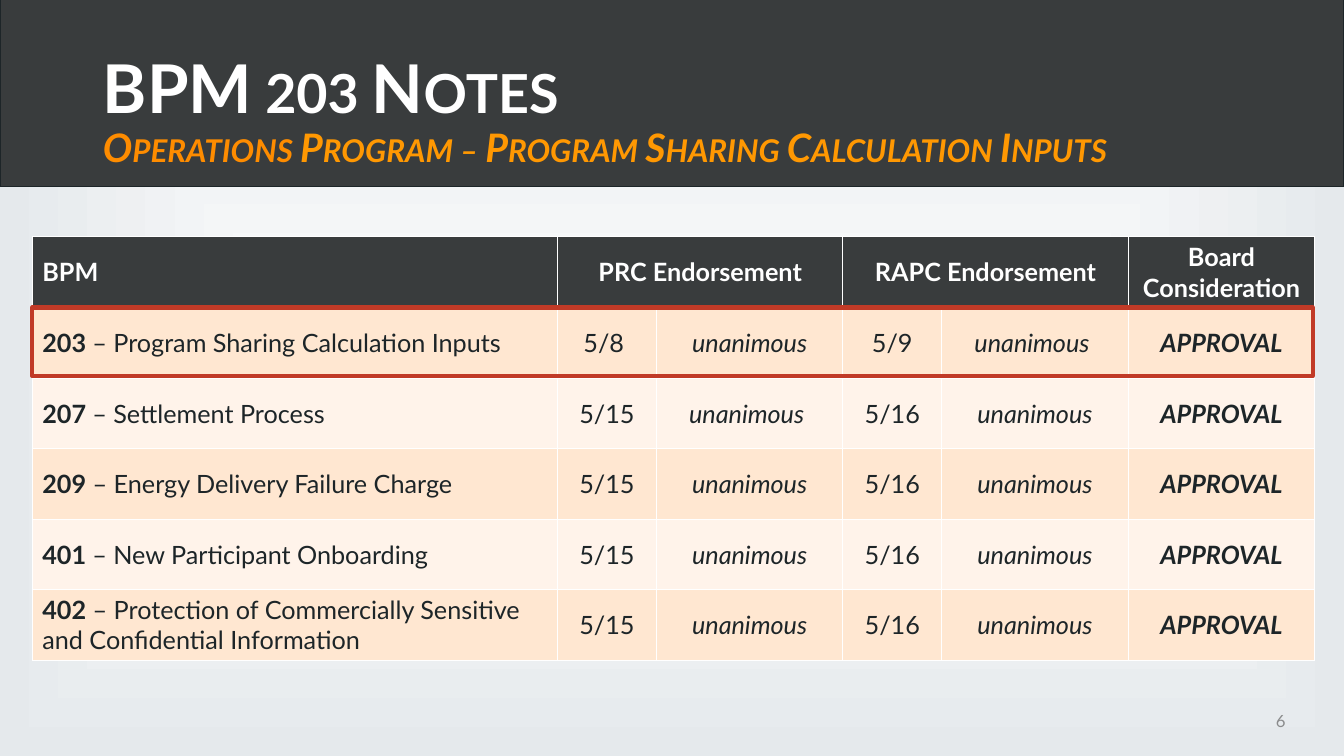
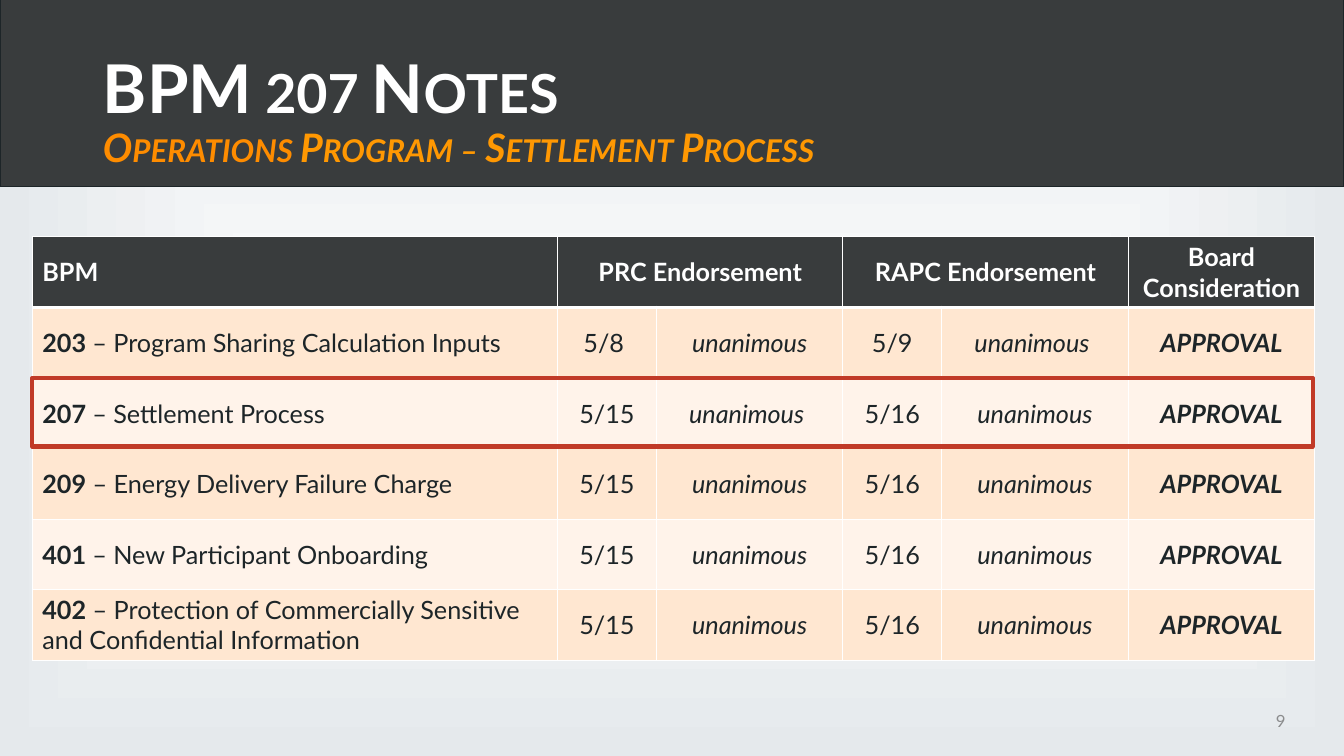
from lxml import etree
from pptx import Presentation
from pptx.dml.color import RGBColor
from pptx.enum.shapes import MSO_SHAPE
from pptx.enum.text import MSO_ANCHOR, MSO_AUTO_SIZE, PP_ALIGN
from pptx.oxml.ns import qn
from pptx.util import Inches, Pt

RECTANGLE = MSO_SHAPE.RECTANGLE
MIDDLE = MSO_ANCHOR.MIDDLE
NO_AUTOFIT = MSO_AUTO_SIZE.NONE
LEFT, CENTER, RIGHT = PP_ALIGN.LEFT, PP_ALIGN.CENTER, PP_ALIGN.RIGHT

FONT = "Lato"
WHITE = RGBColor(0xFF, 0xFF, 0xFF)
MIST = RGBColor(0xE5, 0xE9, 0xEC)
CHARCOAL = RGBColor(0x39, 0x3C, 0x3D)
INK = RGBColor(0x1D, 0x25, 0x28)
GRAY = RGBColor(0x8B, 0x8C, 0x8D)
DEEP_ORANGE = RGBColor(0xFE, 0x8C, 0x00)
ORANGE = RGBColor(0xFF, 0x98, 0x02)
PEACH = RGBColor(0xFF, 0xE7, 0xD1)
CREAM = RGBColor(0xFF, 0xF3, 0xEA)
RED = RGBColor(0xC1, 0x3A, 0x27)

SLIDE_WIDTH, SLIDE_HEIGHT = Inches(13.33), Inches(7.5)
BAND_BOX = (0, Inches(-0.15), SLIDE_WIDTH, Inches(2))
TITLE_BOX = (Inches(0.92), Inches(0.4), Inches(11.5), Inches(1.45))
NUMBER_BOX = (Inches(12.23), Inches(6.95), Inches(0.62), Inches(0.4))
TABLE_BOX = (Inches(0.32), Inches(2.35), Inches(12.7), Inches(4.2))
COLUMN_WIDTHS = (5.21, 0.98, 1.85, 0.98, 1.85, 1.85)
HIGHLIGHT_HEIGHT = Inches(0.68)

HEADINGS = {0: "BPM", 1: "PRC Endorsement", 3: "RAPC Endorsement", 5: "Board Consideration"}
ENDORSEMENTS = [
    ("203 ", "– Program Sharing Calculation Inputs", "5/8 ", "unanimous", "5/9", "unanimous "),
    ("207 ", "– Settlement Process", "5/15", "unanimous ", "5/16", "unanimous"),
    ("209", " – Energy Delivery Failure Charge", "5/15", "unanimous", "5/16", "unanimous"),
    ("401 ", "– New Participant Onboarding", "5/15", "unanimous", "5/16", "unanimous"),
    ("402", " – Protection of Commercially Sensitive and Confidential Information",
     "5/15", "unanimous", "5/16", "unanimous"),
]
DECISION = "APPROVAL"
NOTES = [
    ("BPM 203 Notes", " Program – Program Sharing Calculation Inputs", "6", 1),
    ("BPM 207 Notes", " Program – Settlement Process", "9", 2),
]


def style_run(run, size, color, bold=False, italic=False):
    font = run.font
    font.name, font.size = FONT, Pt(size)
    font.bold, font.italic = bold, italic
    font.color.rgb = color


def add_run(paragraph, text, *style):
    run = paragraph.add_run()
    run.text = text
    style_run(run, *style)
    return run


def place(shape, box):
    shape.left, shape.top, shape.width, shape.height = box


def set_background(master):
    fill = master.background.fill
    fill.gradient()
    for stop, color in zip(fill.gradient_stops, (WHITE, MIST)):
        stop.color.rgb = color
    gradient = master.element.find(".//" + qn("a:gradFill"))
    gradient.remove(gradient.find(qn("a:lin")))
    shade = etree.SubElement(gradient, qn("a:path"), path="shape")
    etree.SubElement(shade, qn("a:fillToRect"), l="50000", t="50000", r="50000", b="50000")


def add_layout_band(layout, slide):
    band = slide.shapes.add_shape(RECTANGLE, *BAND_BOX)
    band.shadow.inherit = False
    band.fill.solid()
    band.fill.fore_color.rgb = CHARCOAL
    band.line.color.rgb = INK
    band.line.width = Pt(1)
    layout.shapes.element.insert(2, band.element)


def fill_title(title, heading, topic):
    place(title, TITLE_BOX)
    frame = title.text_frame
    frame.vertical_anchor = MIDDLE
    frame.auto_size = NO_AUTOFIT
    paragraph = frame.paragraphs[0]
    paragraph.alignment = LEFT
    paragraph.line_spacing = 0.9
    add_run(paragraph, heading, 48, WHITE, True)
    paragraph.add_line_break()
    add_run(paragraph, "Operations", 28, DEEP_ORANGE, True, True)
    add_run(paragraph, topic, 28, ORANGE, True, True)
    for run in paragraph.runs:
        run.font._element.set("cap", "small")


def add_number(slide, box, number):
    frame = slide.shapes.add_textbox(*box).text_frame
    frame.word_wrap = True
    frame.vertical_anchor = MIDDLE
    paragraph = frame.paragraphs[0]
    paragraph.text = number
    paragraph.alignment = RIGHT
    style_run(paragraph.runs[0], 12, GRAY)


def set_borders(cell, top, bottom):
    properties = cell._tc.get_or_add_tcPr()
    widths = {"a:lnL": 1, "a:lnR": 1, "a:lnT": top, "a:lnB": bottom}
    for position, (tag, width) in enumerate(widths.items()):
        line = etree.Element(qn(tag), w=str(Pt(width)))
        fill = etree.SubElement(line, qn("a:solidFill"))
        etree.SubElement(fill, qn("a:srgbClr"), val=str(WHITE))
        properties.insert(position, line)


def format_cell(cell, row, column):
    cell.vertical_anchor = MIDDLE
    cell.fill.solid()
    cell.fill.fore_color.rgb = CHARCOAL if row == 0 else PEACH if row % 2 else CREAM
    set_borders(cell, 3 if row == 1 else 1, 3 if row == 0 else 1)
    cell.text_frame.paragraphs[0].alignment = CENTER if column else LEFT


def add_endorsement_table(slide, box):
    row_count = len(ENDORSEMENTS) + 1
    table = slide.shapes.add_table(row_count, len(COLUMN_WIDTHS), *box).table
    for column, width in zip(table.columns, COLUMN_WIDTHS):
        column.width = Inches(width)
    for row in range(row_count):
        for column in range(len(COLUMN_WIDTHS)):
            format_cell(table.cell(row, column), row, column)
    for first in (1, 3):
        table.cell(0, first).merge(table.cell(0, first + 1))
    for column, heading in HEADINGS.items():
        add_run(table.cell(0, column).text_frame.paragraphs[0], heading, 18, WHITE, True)
    for row, (code, name, *votes) in enumerate(ENDORSEMENTS, start=1):
        subject, *others = (table.cell(row, column).text_frame.paragraphs[0]
                            for column in range(len(COLUMN_WIDTHS)))
        add_run(subject, code, 18, INK, True)
        add_run(subject, name, 18, INK)
        for column, (paragraph, text) in enumerate(zip(others, votes + [DECISION])):
            decided = text == DECISION
            add_run(paragraph, text, 18, INK, decided, decided or column % 2 == 1)


def add_highlight(slide, box, row):
    left, top, width, height = box
    row_height = height // (len(ENDORSEMENTS) + 1)
    frame = slide.shapes.add_shape(
        RECTANGLE, left, top + row * row_height, width, HIGHLIGHT_HEIGHT)
    frame.shadow.inherit = False
    frame.fill.background()
    frame.line.color.rgb = RED
    frame.line.width = Pt(3)


def add_notes_slide(prs, layout, heading, topic, number, row):
    slide = prs.slides.add_slide(layout)
    fill_title(slide.shapes.title, heading, topic)
    add_number(slide, NUMBER_BOX, number)
    add_endorsement_table(slide, TABLE_BOX)
    add_highlight(slide, TABLE_BOX, row)
    return slide


def main():
    prs = Presentation()
    prs.slide_width, prs.slide_height = SLIDE_WIDTH, SLIDE_HEIGHT
    layout = prs.slide_layouts[5]
    set_background(prs.slide_master)
    slides = [add_notes_slide(prs, layout, *notes) for notes in NOTES]
    add_layout_band(layout, slides[0])
    prs.save("out.pptx")


if __name__ == "__main__":
    main()
